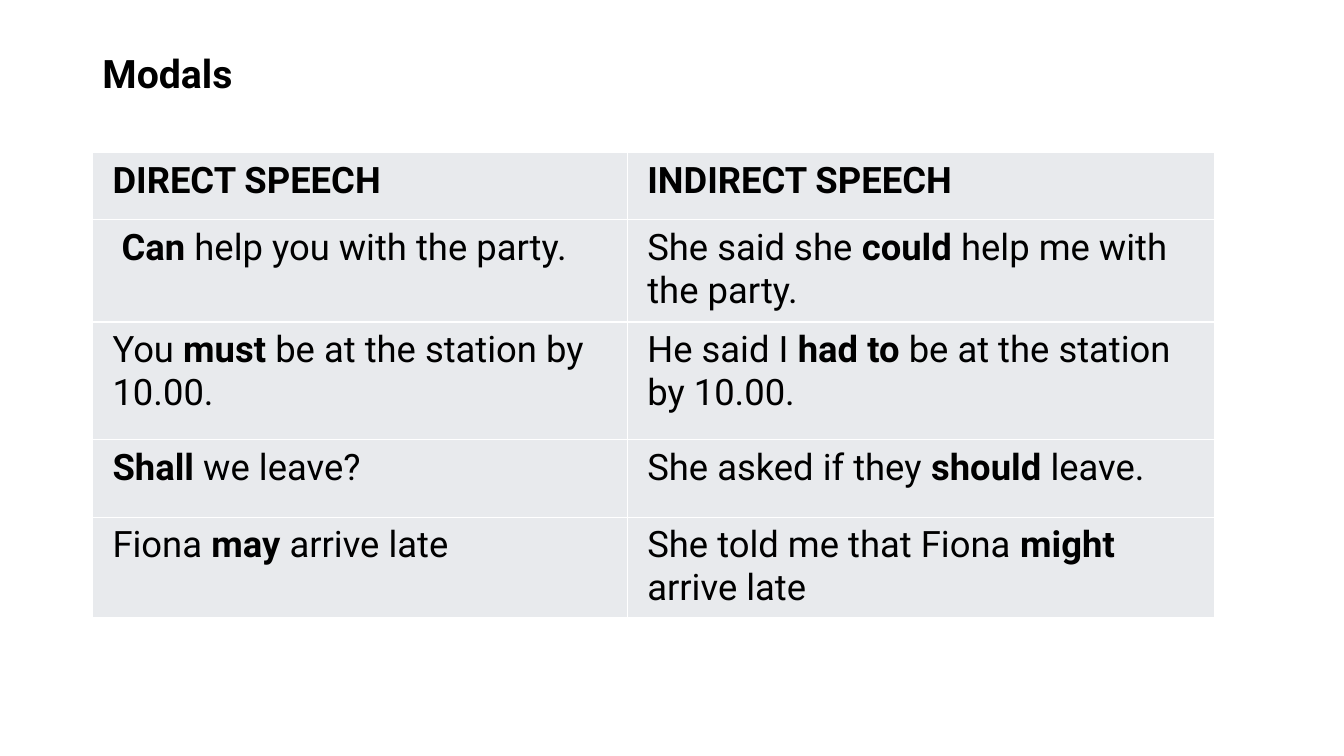
from typing import NamedTuple

from lxml import etree
from pptx import Presentation
from pptx.dml.color import RGBColor
from pptx.enum.text import MSO_ANCHOR, MSO_AUTO_SIZE, PP_ALIGN
from pptx.oxml.ns import qn
from pptx.util import Pt

LEFT, MIDDLE, TOP = PP_ALIGN.LEFT, MSO_ANCHOR.MIDDLE, MSO_ANCHOR.TOP
NO_FIT = MSO_AUTO_SIZE.NONE
FACE = "Roboto"
BLACK, WHITE, GREY = "000000", "FFFFFF", "E8EAED"
WIDTHS = (382, 419.5)


class Row(NamedTuple):
    """Height in points and two texts, with bold parts between asterisks."""
    height: float
    direct: str
    indirect: str


ROWS = (
    Row(48, "*DIRECT SPEECH*", "*INDIRECT SPEECH*"),
    Row(73, " *Can* help you with the party.",
        "She said she *could* help me with the party."),
    Row(84, "You *must* be at the station by 10.00.",
        "He said I *had to* be at the station by 10.00."),
    Row(55.5, "*Shall* we leave?", "She asked if they *should* leave."),
    Row(72, "Fiona *may* arrive late",
        "She told me that Fiona *might* arrive late"),
)


def color(code: str) -> RGBColor:
    return RGBColor.from_string(code)


def set_font(para, size: float) -> None:
    para.alignment = LEFT
    font = para.font
    font.name, font.size = FACE, Pt(size)
    font.color.rgb = color(BLACK)


def add_edges(cell) -> None:
    props = cell._tc.get_or_add_tcPr()
    for side in ("a:lnL", "a:lnR", "a:lnT", "a:lnB"):
        line = etree.SubElement(props, qn(side), w=str(Pt(1)))
        fill = etree.SubElement(line, qn("a:solidFill"))
        etree.SubElement(fill, qn("a:srgbClr"), val=WHITE)


def fill_cell(cell, text: str) -> None:
    cell.margin_left = cell.margin_right = Pt(14.4)
    cell.margin_top = cell.margin_bottom = Pt(5)
    cell.vertical_anchor = TOP
    add_edges(cell)
    cell.fill.solid()
    cell.fill.fore_color.rgb = color(GREY)
    para = cell.text_frame.paragraphs[0]
    set_font(para, 26)
    for i, part in enumerate(text.split("*")):
        if part:
            run = para.add_run()
            run.text = part
            run.font.bold = i % 2 == 1


def add_title(slide, text: str) -> None:
    title = slide.shapes.title
    title.left, title.top = Pt(66), Pt(14.4)
    title.width, title.height = Pt(828), Pt(80)
    frame = title.text_frame
    frame.text = text
    frame.auto_size, frame.vertical_anchor = NO_FIT, MIDDLE
    para = frame.paragraphs[0]
    set_font(para, 28)
    para.font.bold = True
    para.line_spacing = 0.9


def add_grid(slide) -> None:
    high = sum(row.height for row in ROWS)
    table = slide.shapes.add_table(
        len(ROWS), len(WIDTHS), Pt(66), Pt(109),
        Pt(sum(WIDTHS)), Pt(high)).table
    table.first_row = table.horz_banding = False
    for col, width in zip(table.columns, WIDTHS):
        col.width = Pt(width)
    for line, row in zip(table.rows, ROWS):
        line.height = Pt(row.height)
        for cell, text in zip(line.cells, (row.direct, row.indirect)):
            fill_cell(cell, text)


def main() -> None:
    deck = Presentation()
    deck.slide_width, deck.slide_height = Pt(960), Pt(540)
    slide = deck.slides.add_slide(deck.slide_layouts[5])
    add_title(slide, "Modals")
    add_grid(slide)
    deck.save("out.pptx")


if __name__ == "__main__":
    main()
